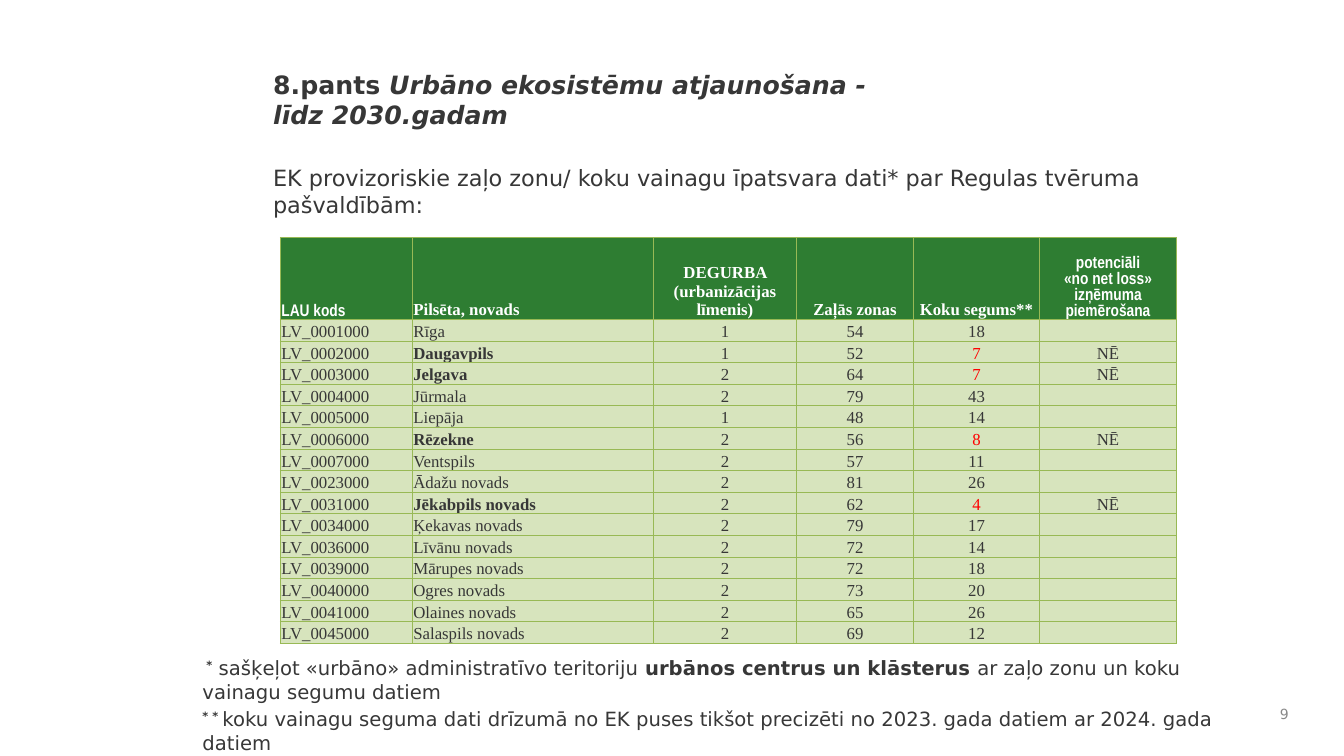
from lxml import etree
from pptx import Presentation
from pptx.dml.color import RGBColor
from pptx.enum.text import MSO_ANCHOR, PP_ALIGN
from pptx.oxml.ns import qn
from pptx.util import Inches, Pt

LEFT, CENTER, RIGHT = PP_ALIGN.LEFT, PP_ALIGN.CENTER, PP_ALIGN.RIGHT
TOP, MIDDLE, BOTTOM = MSO_ANCHOR.TOP, MSO_ANCHOR.MIDDLE, MSO_ANCHOR.BOTTOM
TITLE_ONLY = 5
SLIDE_WIDTH, SLIDE_HEIGHT = Inches(13.33), Inches(7.5)

SANS, SERIF, NARROW = "DejaVu Sans", "Times New Roman", "Arial Narrow"
INK, WHITE, GREY, RED = "373737", "FFFFFF", "898989", "FF0000"
HEADER_GREEN, ROW_GREEN, BORDER_GREEN = "2E7D32", "D7E4BD", "98B955"

# Left, top, width and height in percent of the slide
TITLE_BOX = (19.58, 5.6, 66.69, 15.07)
INTRO_BOX = (19.58, 21.07, 73.74, 9)
TABLE_BOX = (20.86, 31.47, 66.69, 53.47)
FOOTNOTE_BOX = (14.33, 86.13, 78.32, 4.4)
NUMBER_BOX = (93.32, 92.27, 3.3, 4.4)

# Percent of the table's width and height
COLUMN_SHARES = (14.73, 26.9, 15.96, 13.06, 14.06, 15.29)
HEADER_SHARE = 19.8
COLUMN_ALIGNS = (LEFT, LEFT, CENTER, CENTER, CENTER, CENTER)

HEADERS = (
    (NARROW, ["LAU kods"]),
    (SERIF, ["Pilsēta, novads"]),
    (SERIF, ["DEGURBA (urbanizācijas līmenis)"]),
    (SERIF, ["Zaļās zonas"]),
    (SERIF, ["Koku segums**"]),
    (NARROW, ["potenciāli", "«no net loss» izņēmuma piemērošana"]),
)
MIN_TREE_COVER = 10  # percent; below it the exemption does not apply
# Code, municipality, degree of urbanisation, green areas, tree cover
MUNICIPALITIES = (
    ("LV_0001000", "Rīga", 1, 54, 18),
    ("LV_0002000", "Daugavpils", 1, 52, 7),
    ("LV_0003000", "Jelgava", 2, 64, 7),
    ("LV_0004000", "Jūrmala", 2, 79, 43),
    ("LV_0005000", "Liepāja", 1, 48, 14),
    ("LV_0006000", "Rēzekne", 2, 56, 8),
    ("LV_0007000", "Ventspils", 2, 57, 11),
    ("LV_0023000", "Ādažu novads", 2, 81, 26),
    ("LV_0031000", "Jēkabpils novads", 2, 62, 4),
    ("LV_0034000", "Ķekavas novads", 2, 79, 17),
    ("LV_0036000", "Līvānu novads", 2, 72, 14),
    ("LV_0039000", "Mārupes novads", 2, 72, 18),
    ("LV_0040000", "Ogres novads", 2, 73, 20),
    ("LV_0041000", "Olaines novads", 2, 65, 26),
    ("LV_0045000", "Salaspils novads", 2, 69, 12),
)


def color(hex_string):
    return RGBColor.from_string(hex_string)


def place(box):
    """Turn percentages of the slide into left, top, width and height."""
    sides = (SLIDE_WIDTH, SLIDE_HEIGHT) * 2
    return [round(side * share / 100) for side, share in zip(sides, box)]


def add_span(para, text, size, font=SANS, ink=INK, bold=False, italic=False, raised=False):
    span = para.add_run()
    span.text = text
    span.font.name, span.font.size = font, Pt(size)
    span.font.bold, span.font.italic = bold, italic
    span.font.color.rgb = color(ink)
    if raised:
        span.font._element.set("baseline", "30000")


def add_text_box(slide, box, align=LEFT, anchor=TOP):
    frame = slide.shapes.add_textbox(*place(box)).text_frame
    frame.word_wrap = True
    frame.vertical_anchor = anchor
    frame.paragraphs[0].alignment = align
    return frame


def write_title(slide, box):
    title = slide.shapes.title
    title.left, title.top, title.width, title.height = place(box)
    title.text_frame.vertical_anchor = MIDDLE
    para = title.text_frame.paragraphs[0]
    para.alignment = LEFT
    add_span(para, "8.pants ", 18, bold=True)
    add_span(para, "Urbāno ekosistēmu atjaunošana -", 18, bold=True, italic=True)
    para.add_line_break()
    add_span(para, "līdz 2030.gadam", 18, bold=True, italic=True)


def write_intro(slide, box):
    para = add_text_box(slide, box).paragraphs[0]
    add_span(para, "EK provizoriskie zaļo zonu/ koku vainagu īpatsvara dati* "
                   "par Regulas tvēruma pašvaldībām:", 16)


def style_cell(cell, fill):
    cell.margin_left = cell.margin_right = cell.margin_top = Inches(0.01)
    cell.margin_bottom = 0
    cell.vertical_anchor = BOTTOM
    properties = cell._tc.get_or_add_tcPr()
    for side in ("a:lnL", "a:lnR", "a:lnT", "a:lnB"):
        line = etree.SubElement(properties, qn(side), w=str(Pt(0.75)))
        paint = etree.SubElement(line, qn("a:solidFill"))
        etree.SubElement(paint, qn("a:srgbClr"), val=BORDER_GREEN)
    cell.fill.solid()
    cell.fill.fore_color.rgb = color(fill)


def write_cell(cell, lines, align, fill, **look):
    style_cell(cell, fill)
    frame = cell.text_frame
    for index, text in enumerate(lines):
        para = frame.add_paragraph() if index else frame.paragraphs[0]
        para.alignment = align
        if text:
            add_span(para, text, 12, **look)
        else:
            etree.SubElement(para._p, qn("a:endParaRPr"), sz="1200")


def build_table(slide, box):
    left, top, width, height = place(box)
    row_count = len(MUNICIPALITIES) + 1
    table = slide.shapes.add_table(
        row_count, len(HEADERS), left, top, width, height).table
    table.horz_banding = False
    for column, share in zip(table.columns, COLUMN_SHARES):
        column.width = round(width * share / 100)
    header_height = round(height * HEADER_SHARE / 100)
    for index, row in enumerate(table.rows):
        row.height = (height - header_height) // len(MUNICIPALITIES) if index else header_height

    for column, (font, lines) in enumerate(HEADERS):
        write_cell(table.cell(0, column), lines, COLUMN_ALIGNS[column],
                   HEADER_GREEN, font=font, ink=WHITE, bold=True)
    for row, record in enumerate(MUNICIPALITIES, start=1):
        low = record[-1] < MIN_TREE_COVER
        for column, value in enumerate(record + ("NĒ" if low else "",)):
            write_cell(table.cell(row, column), [str(value)], COLUMN_ALIGNS[column],
                       ROW_GREEN, font=SERIF,
                       ink=RED if low and column == 4 else INK,
                       bold=low and column == 1)


def write_footnotes(slide, box):
    frame = add_text_box(slide, box)
    first = frame.paragraphs[0]
    add_span(first, " *", 14, bold=True, raised=True)
    add_span(first, " sašķeļot «urbāno» administratīvo teritoriju ", 14)
    add_span(first, "urbānos centrus un klāsterus ", 14, bold=True)
    add_span(first, "ar zaļo zonu un koku vainagu segumu datiem", 14)
    second = frame.add_paragraph()
    second.space_before = Pt(2.8)
    add_span(second, "* * ", 14, bold=True, raised=True)
    add_span(second, "koku vainagu seguma dati drīzumā no EK puses tikšot precizēti "
                     "no 2023. gada datiem ar 2024. gada datiem", 14)


def write_page_number(slide, box):
    frame = add_text_box(slide, box, RIGHT, MIDDLE)
    add_span(frame.paragraphs[0], "9", 10, ink=GREY)


def main():
    deck = Presentation()
    deck.slide_width, deck.slide_height = SLIDE_WIDTH, SLIDE_HEIGHT
    slide = deck.slides.add_slide(deck.slide_layouts[TITLE_ONLY])
    write_title(slide, TITLE_BOX)
    write_intro(slide, INTRO_BOX)
    write_footnotes(slide, FOOTNOTE_BOX)
    write_page_number(slide, NUMBER_BOX)
    build_table(slide, TABLE_BOX)
    deck.save("out.pptx")


if __name__ == "__main__":
    main()
